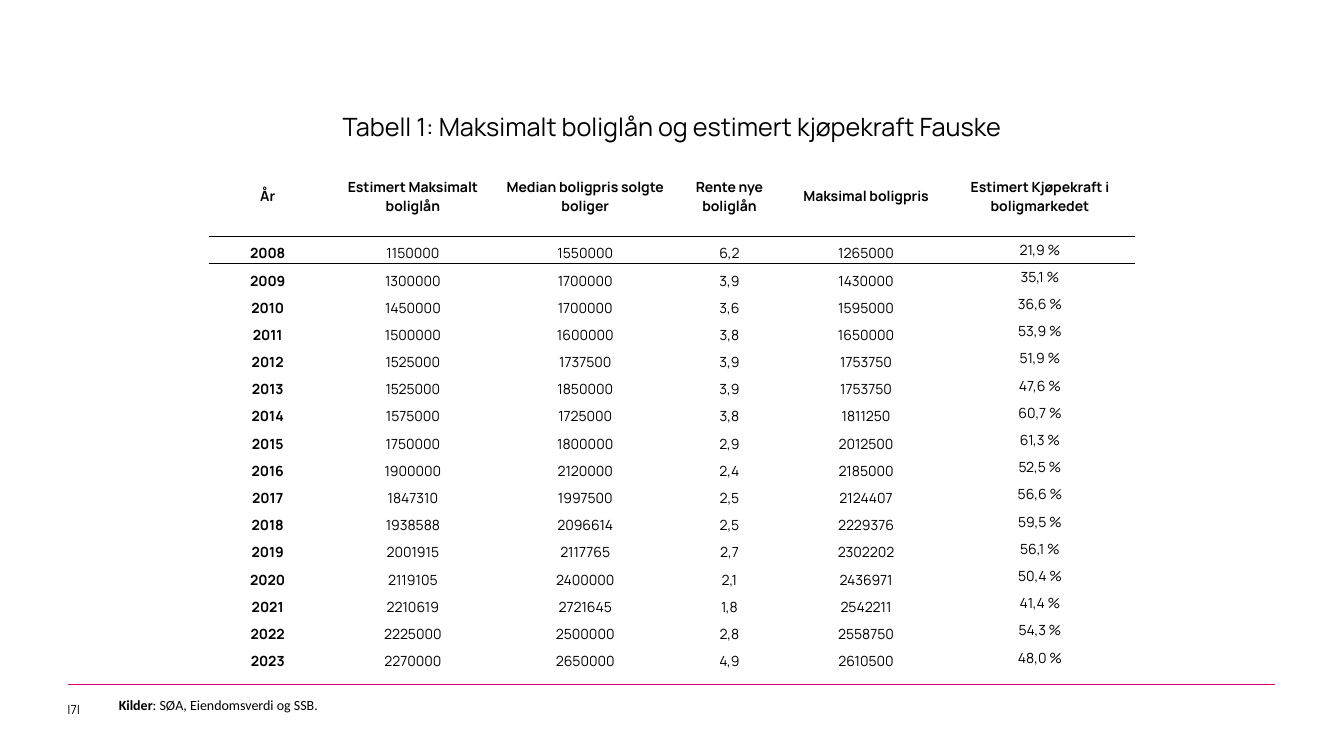
from lxml import etree
from pptx import Presentation
from pptx.dml.color import RGBColor
from pptx.enum.shapes import MSO_CONNECTOR
from pptx.enum.text import MSO_ANCHOR, PP_ALIGN
from pptx.oxml import parse_xml
from pptx.oxml.ns import nsdecls, qn
from pptx.util import Inches, Pt

BLACK = RGBColor(0x00, 0x00, 0x00)
WHITE = RGBColor(0xFF, 0xFF, 0xFF)
PINK = RGBColor(0xDB, 0x00, 0x71)
STRAIGHT = MSO_CONNECTOR.STRAIGHT
LEFT, CENTER = PP_ALIGN.LEFT, PP_ALIGN.CENTER
TOP, MIDDLE, BOTTOM = MSO_ANCHOR.TOP, MSO_ANCHOR.MIDDLE, MSO_ANCHOR.BOTTOM
NO_STYLE = "{2D5ABB26-0587-4C30-8999-92F81FD0307C}"

HEADERS = ["År", "Estimert Maksimalt boliglån", "Median boligpris solgte boliger",
           "Rente nye boliglån", "Maksimal boligpris",
           "Estimert Kjøpekraft i boligmarkedet"]
YEARS = [
    ["2008", "1150000", "1550000", "6,2", "1265000", "21,9 %"],
    ["2009", "1300000", "1700000", "3,9", "1430000", "35,1 %"],
    ["2010", "1450000", "1700000", "3,6", "1595000", "36,6 %"],
    ["2011", "1500000", "1600000", "3,8", "1650000", "53,9 %"],
    ["2012", "1525000", "1737500", "3,9", "1753750", "51,9 %"],
    ["2013", "1525000", "1850000", "3,9", "1753750", "47,6 %"],
    ["2014", "1575000", "1725000", "3,8", "1811250", "60,7 %"],
    ["2015", "1750000", "1800000", "2,9", "2012500", "61,3 %"],
    ["2016", "1900000", "2120000", "2,4", "2185000", "52,5 %"],
    ["2017", "1847310", "1997500", "2,5", "2124407", "56,6 %"],
    ["2018", "1938588", "2096614", "2,5", "2229376", "59,5 %"],
    ["2019", "2001915", "2117765", "2,7", "2302202", "56,1 %"],
    ["2020", "2119105", "2400000", "2,1", "2436971", "50,4 %"],
    ["2021", "2210619", "2721645", "1,8", "2542211", "41,4 %"],
    ["2022", "2225000", "2500000", "2,8", "2558750", "54,3 %"],
    ["2023", "2270000", "2650000", "4,9", "2610500", "48,0 %"],
]
COLUMN_WIDTHS = [1.17, 1.71, 1.71, 1.15, 1.56, 1.89]
HEADER_HEIGHT, ROW_HEIGHT = 0.79, 0.27


def add_span(para, text, size=10, font="Manrope", bold=False, align=LEFT):
    para.alignment = align
    span = para.add_run()
    span.text = text
    span.font.size = Pt(size)
    span.font.name = font
    span.font.bold = bold
    span.font.color.rgb = BLACK


def add_text_box(left, top, width, height, anchor=TOP):
    box = slide.shapes.add_textbox(Inches(left), Inches(top), Inches(width), Inches(height))
    box.text_frame.word_wrap = True
    box.text_frame.vertical_anchor = anchor
    return box.text_frame.paragraphs[0]


deck = Presentation()
deck.slide_width, deck.slide_height = Inches(13.33), Inches(7.5)
slide = deck.slides.add_slide(deck.slide_layouts[6])

# Footer rule, sources and page number
rule = slide.shapes.add_connector(STRAIGHT, Inches(0.67), Inches(6.79),
                                  Inches(12.65), Inches(6.79))
rule.line.color.rgb = PINK
rule.line.width = Pt(0.5)
etree.SubElement(rule._element.spPr, qn("a:effectLst"))

sources = add_text_box(1.08, 6.86, 11.57, 0.27)
add_span(sources, "Kilder", font="Calibri", bold=True)
add_span(sources, ": SØA, Eiendomsverdi og SSB.", font="Calibri")

add_span(add_text_box(0.57, 6.76, 0.51, 0.4, anchor=BOTTOM), "|7|", size=9)

# Title
add_span(add_text_box(0, 1.06, 13.33, 0.4),
         "Tabell 1: Maksimalt boliglån og estimert kjøpekraft Fauske", size=18, align=CENTER)

# Table
rows = [HEADERS] + YEARS
frame = slide.shapes.add_table(len(rows), len(HEADERS), Inches(2.07), Inches(1.55),
                               Inches(sum(COLUMN_WIDTHS)),
                               Inches(HEADER_HEIGHT + ROW_HEIGHT * len(YEARS)))
table = frame.table
table.horz_banding = False
table._tbl.tblPr.find(qn("a:tableStyleId")).text = NO_STYLE
for column, width in zip(table.columns, COLUMN_WIDTHS):
    column.width = Inches(width)

for r, values in enumerate(rows):
    table.rows[r].height = Inches(ROW_HEIGHT if r else HEADER_HEIGHT)
    for c, value in enumerate(values):
        cell = table.cell(r, c)
        cell.margin_left = cell.margin_right = cell.margin_top = Inches(0.01)
        cell.margin_bottom = 0
        is_last = c == len(HEADERS) - 1
        cell.vertical_anchor = MIDDLE if r == 0 or is_last else BOTTOM
        cell.fill.solid()
        cell.fill.fore_color.rgb = WHITE
        add_span(cell.text_frame.paragraphs[0], value, bold=r == 0 or c == 0, align=CENTER)
        # Line between the header and the first year
        if r < 2:
            edge = "lnT" if r else "lnB"
            cell._tc.get_or_add_tcPr().insert(0, parse_xml(
                f'<a:{edge} {nsdecls("a")} w="{Pt(0.5)}"><a:solidFill>'
                f'<a:srgbClr val="{BLACK}"/></a:solidFill></a:{edge}>'))

deck.save("out.pptx")
